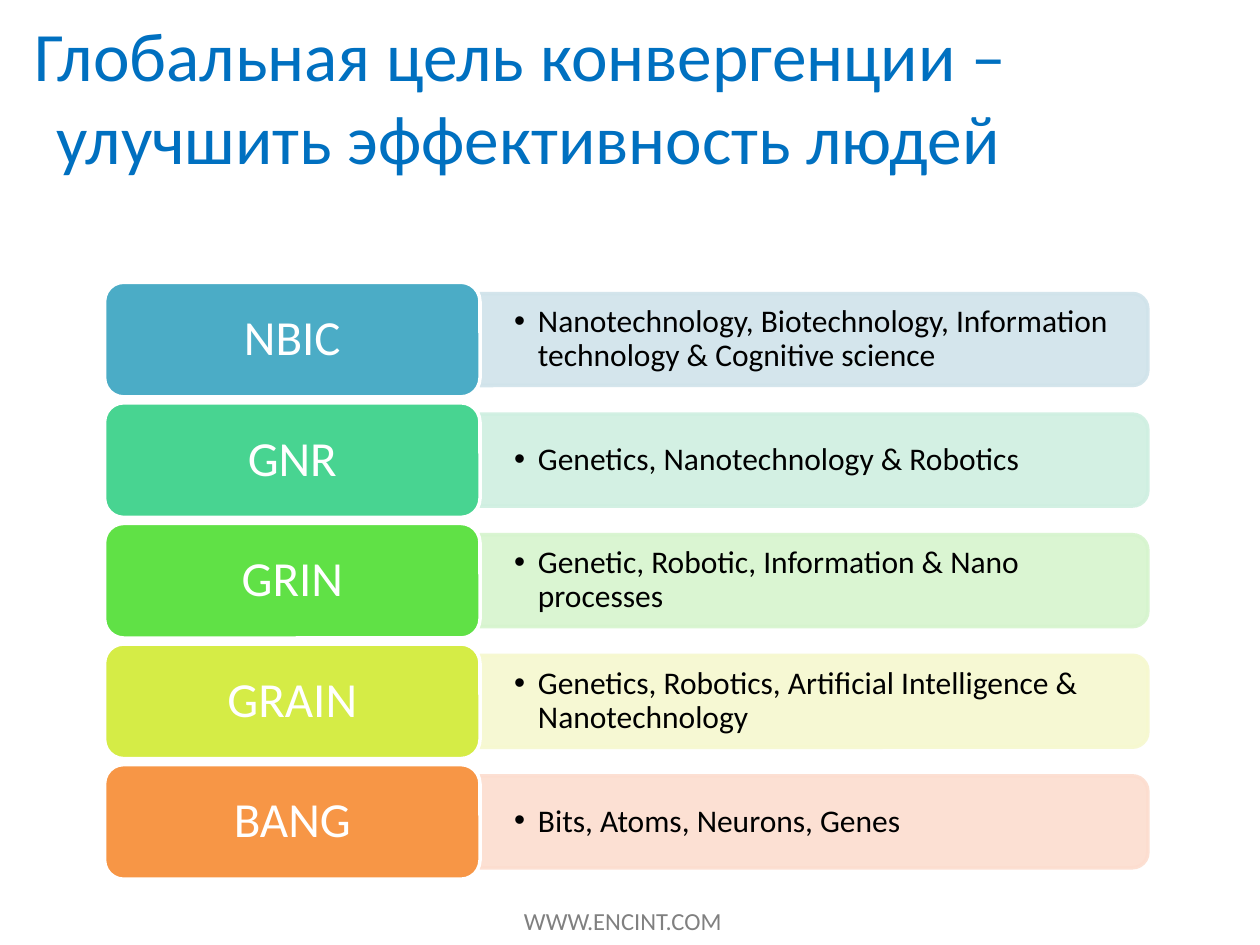
from dataclasses import dataclass

from lxml.etree import SubElement
from pptx import Presentation
from pptx.dml.color import RGBColor as Rgb
from pptx.enum.shapes import MSO_SHAPE as Shape
from pptx.enum.text import MSO_ANCHOR as Anchor, MSO_AUTO_SIZE as Fit, PP_ALIGN as Align
from pptx.oxml.ns import qn
from pptx.util import Inches, Pt


@dataclass(frozen=True)
class Theme:
    font: str = "Calibri"
    blue: str = "0070C0"
    grey: str = "808080"
    black: str = "000000"
    white: str = "FFFFFF"
    head: float = 39.6
    label: float = 28
    body: float = 18
    foot: float = 14
    edge: float = 2


ROWS = [
    ("NBIC", "Nanotechnology, Biotechnology, Information technology & Cognitive science",
     "4BACC6", "D0E3EA"),
    ("GNR", "Genetics, Nanotechnology & Robotics", "48D491", "CFEFE1"),
    ("GRIN", "Genetic, Robotic, Information & Nano processes", "60E146", "D6F4CE"),
    ("GRAIN", "Genetics, Robotics, Artificial Intelligence & Nanotechnology",
     "D5EC46", "F6F8CF"),
    ("BANG", "Bits, Atoms, Neurons, Genes", "F79646", "FCDDCF"),
]
TOP, STEP = 2.24, 0.957
LEFT, WIDE, HIGH = 0.83, 2.98, 0.91
BAR_W, BAR_H = 5.3, 0.73


def inch(*nums):
    return [Inches(n) for n in nums]


def fade(color, pct):
    """Make a solid colour element pct percent opaque."""
    SubElement(color, qn("a:alpha"), val=str(pct * 1000))


def write(frame, text, *, font, size, color, align=Align.LEFT, anchor=Anchor.MIDDLE,
          pad=(0.1, 0.05), wrap=True, fit=Fit.NONE, space=None, bullet=None):
    """Fill a frame with one paragraph; bullet is the hanging indent in inches."""
    frame.word_wrap, frame.auto_size = wrap, fit
    frame.vertical_anchor = anchor
    frame.margin_left = frame.margin_right = Inches(pad[0])
    frame.margin_top = frame.margin_bottom = Inches(pad[1])
    para = frame.paragraphs[0]
    para.text = text
    para.alignment, para.line_spacing = align, space
    if bullet:
        para.level = 1
        props = para._p.get_or_add_pPr()
        props.set("marL", str(Inches(bullet)))
        props.set("indent", str(-Inches(bullet)))
        SubElement(props, qn("a:buFont"), typeface="Arial")
        SubElement(props, qn("a:buChar"), char="•")
    for run in para.runs:
        run.font.name, run.font.size = font, Pt(size)
        run.font.color.rgb = Rgb.from_string(color)


class Deck:
    def __init__(self, theme):
        self.theme = theme
        self.file = Presentation()
        self.file.slide_width, self.file.slide_height = inch(10, 7.5)
        self.slide = self.file.slides.add_slide(self.file.slide_layouts[5])

    def title(self, text, box):
        head = self.slide.shapes.title
        head.left, head.top, head.width, head.height = inch(*box)
        write(head.text_frame, text, font=self.theme.font, size=self.theme.head,
              color=self.theme.blue, align=Align.CENTER)

    def text(self, text, box, **style):
        area = self.slide.shapes.add_textbox(*inch(*box))
        write(area.text_frame, text, font=self.theme.font, **style)

    def shape(self, kind, box, fill, line):
        item = self.slide.shapes.add_shape(kind, *inch(*box))
        item.shadow.inherit = False
        item.fill.solid()
        item.fill.fore_color.rgb = Rgb.from_string(fill)
        item.line.color.rgb = Rgb.from_string(line)
        item.line.width = Pt(self.theme.edge)
        return item

    def bar(self, x, mid, color):
        """Draw a pale bar, rounded on its right, by turning a tall shape."""
        box = (x + (BAR_W - BAR_H) / 2, mid - BAR_W / 2, BAR_H, BAR_W)
        item = self.shape(Shape.ROUND_2_SAME_RECTANGLE, box, color, color)
        item.rotation = 90
        for color in item._element.spPr.iter(qn("a:srgbClr")):
            fade(color, 90)

    def label(self, text, box, fill):
        item = self.shape(Shape.ROUNDED_RECTANGLE, box, fill, self.theme.white)
        write(item.text_frame, text, font=self.theme.font, size=self.theme.label,
              color=self.theme.white, align=Align.CENTER, pad=(0.16, 0.1), space=0.9)

    def row(self, top, name, note, dark, pale):
        side, mid = LEFT + WIDE, top + HIGH / 2
        self.bar(side, mid, pale)
        self.text(note, (side, mid - 0.33, 5.26, 0.66), size=self.theme.body,
                  color=self.theme.black, pad=(0.27, 0.14), space=0.9, bullet=0.19)
        self.label(name, (LEFT, top, WIDE, HIGH), dark)


def main():
    theme = Theme()
    deck = Deck(theme)
    deck.text("WWW.ENCINT.COM", (4.06, 7.14, 1.78, 0.34), size=theme.foot,
              color=theme.grey, anchor=Anchor.TOP, wrap=False, fit=Fit.SHAPE_TO_FIT_TEXT)
    deck.title("Глобальная цель конвергенции – \vулучшить эффективность людей",
               (0, 0.13, 8.39, 1.25))
    for i, row in enumerate(ROWS):
        deck.row(TOP + i * STEP, *row)
    deck.file.save("out.pptx")


if __name__ == "__main__":
    main()
